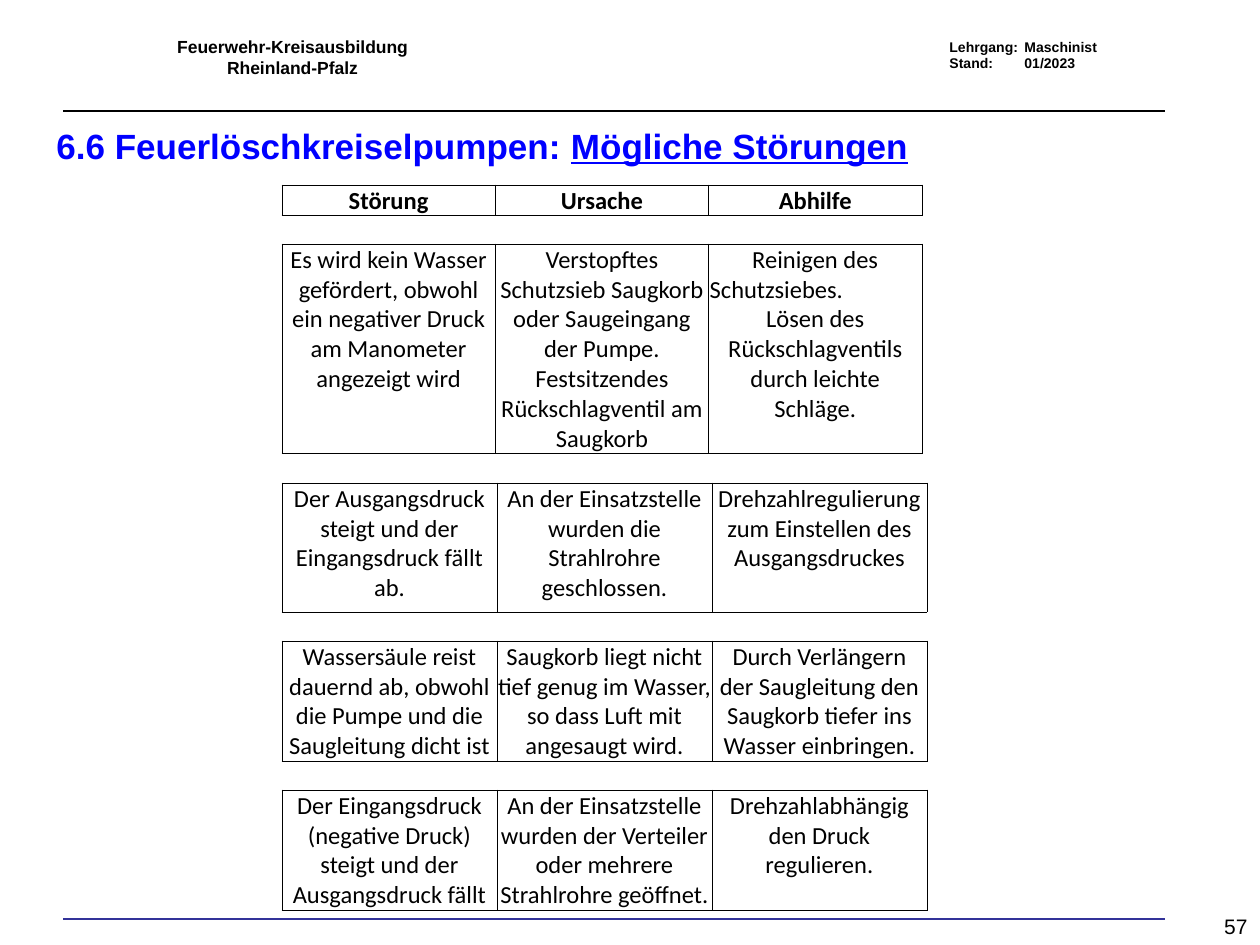
"""Build the slide on possible faults of fire pumps."""
from lxml import etree
from pptx import Presentation, util as u
from pptx.dml.color import RGBColor
from pptx.enum import shapes, text
from pptx.oxml import ns

PX = 914400 / 126
HUES = {"ink": "000000", "title": "0000FF", "foot": "333399"}
LEFT, MID, RIGHT = text.PP_ALIGN.LEFT, text.PP_ALIGN.CENTER, text.PP_ALIGN.RIGHT
TOP, BASE = text.MSO_ANCHOR.TOP, text.MSO_ANCHOR.BOTTOM
BODY = {"name": "Calibri", "size": 14, "bold": False}
HEAD = {**BODY, "bold": True}
TAB = 75

BOXES = [
    {"at": (154, 30, 277, 56), "align": MID, "anchor": TOP, "wrap": True,
     "font": {"name": "Arial", "size": 10, "bold": True}, "hue": "ink",
     "lines": [["Feuerwehr-Kreisausbildung"], ["Rheinland-Pfalz"]]},
    {"at": (937, 32, 208, 68), "align": LEFT, "anchor": TOP, "wrap": True,
     "font": {"name": "Arial", "size": 8, "bold": True}, "hue": "ink",
     "lines": [["Lehrgang:\tMaschinist"], ["Stand:\t01/2023"]]},
    {"at": (998, 882, 262, 63), "align": RIGHT, "anchor": BASE, "wrap": True,
     "font": {"name": "Arial", "size": 12, "bold": False}, "hue": "ink",
     "lines": [["57"]]},
    {"at": (44, 118, 1191, 44), "align": LEFT, "anchor": TOP, "wrap": False,
     "font": {"name": "Arial", "size": 20, "bold": True}, "hue": "title",
     "lines": [["6.6 Feuerlöschkreiselpumpen: ", "Mögliche Störungen"]]},
]
RULES = [(111, "ink"), (919, "foot")]
GRIDS = [
    (185, 30, 640, HEAD, BASE, ["Störung", "Ursache", "Abhilfe"]),
    (244, 207, 640, BODY, TOP, [
        "Es wird kein Wasser gefördert, obwohl ein negativer Druck am Manometer angezeigt wird",
        "Verstopftes Schutzsieb Saugkorb oder Saugeingang der Pumpe. "
        "Festsitzendes Rückschlagventil am Saugkorb",
        [("Reinigen des", MID), ("Schutzsiebes.", LEFT),
         ("Lösen des Rückschlagventils durch leichte Schläge.", MID)]]),
    (483, 129, 645, BODY, TOP, [
        "Der Ausgangsdruck steigt und der Eingangsdruck fällt ab.",
        "An der Einsatzstelle wurden die Strahlrohre geschlossen.",
        "Drehzahlregulierung zum Einstellen des Ausgangsdruckes"]),
    (641, 118, 645, BODY, TOP, [
        "Wassersäule reist dauernd ab, obwohl die Pumpe und die Saugleitung dicht ist",
        "Saugkorb liegt nicht tief genug im Wasser, so dass Luft mit angesaugt wird.",
        "Durch Verlängern der Saugleitung den Saugkorb tiefer ins Wasser einbringen."]),
    (790, 118, 645, BODY, TOP, [
        "Der Eingangsdruck (negative Druck) steigt und der Ausgangsdruck fällt",
        "An der Einsatzstelle wurden der Verteiler oder mehrere Strahlrohre geöffnet.",
        "Drehzahlabhängig den Druck regulieren."]),
]


def emu(*nums):
    return [u.Emu(round(n * PX)) for n in nums]


def color(hue):
    return RGBColor.from_string(HUES[hue])


def style(font, form, hue):
    for key, val in form.items():
        setattr(font, key, u.Pt(val) if key == "size" else val)
    font.color.rgb = color(hue)


def write(frame, lines, form, hue):
    for i, (parts, align) in enumerate(lines):
        para = frame.paragraphs[0] if i == 0 else frame.add_paragraph()
        para.alignment = align
        if any("\t" in part for part in parts):
            tabs = etree.SubElement(para._p.get_or_add_pPr(), ns.qn("a:tabLst"))
            etree.SubElement(tabs, ns.qn("a:tab"), pos=str(emu(TAB)[0]), algn="l")
        for n, part in enumerate(parts):
            run = para.add_run()
            run.text = part
            style(run.font, form, hue)
            if n:
                run.font.underline = True


def border(cell):
    props = cell._tc.get_or_add_tcPr()
    for i, side in enumerate(("lnL", "lnR", "lnT", "lnB")):
        line = etree.Element(ns.qn("a:" + side), w=str(u.Pt(0.5)))
        fill = etree.SubElement(line, ns.qn("a:solidFill"))
        etree.SubElement(fill, ns.qn("a:srgbClr"), val=HUES["ink"])
        props.insert(i, line)


def add_box(slide, box):
    frame = slide.shapes.add_textbox(*emu(*box["at"])).text_frame
    frame.word_wrap = box["wrap"]
    frame.vertical_anchor = box["anchor"]
    lines = [(parts, box["align"]) for parts in box["lines"]]
    write(frame, lines, box["font"], box["hue"])


def add_rule(slide, y, hue):
    line = slide.shapes.add_connector(
        shapes.MSO_CONNECTOR.STRAIGHT, *emu(63, y, 1165, y))
    line.line.color.rgb = color(hue)
    line.line.width = u.Pt(1)
    etree.SubElement(line._element.spPr, ns.qn("a:effectLst"))


def add_grid(slide, top, high, wide, form, anchor, words):
    table = slide.shapes.add_table(
        1, len(words), *emu(282, top, wide, high)).table
    table.first_row = table.horz_banding = False
    inset = {"margin_left": 1, "margin_right": 1, "margin_top": 1, "margin_bottom": 0}
    for i, item in enumerate(words):
        table.columns[i].width = emu(wide / len(words))[0]
        cell = table.cell(0, i)
        cell.fill.background()
        cell.vertical_anchor = anchor
        for key, val in inset.items():
            setattr(cell, key, emu(val)[0])
        border(cell)
        lines = [(item, MID)] if isinstance(item, str) else item
        write(cell.text_frame, [([t], align) for t, align in lines], form, "ink")


def main():
    deck = Presentation()
    deck.slide_width, deck.slide_height = emu(1260, 945)
    slide = deck.slides.add_slide(deck.slide_layouts[6])
    for rule in RULES:
        add_rule(slide, *rule)
    for grid in GRIDS:
        add_grid(slide, *grid)
    for box in BOXES:
        add_box(slide, box)
    deck.save("out.pptx")


if __name__ == "__main__":
    main()
